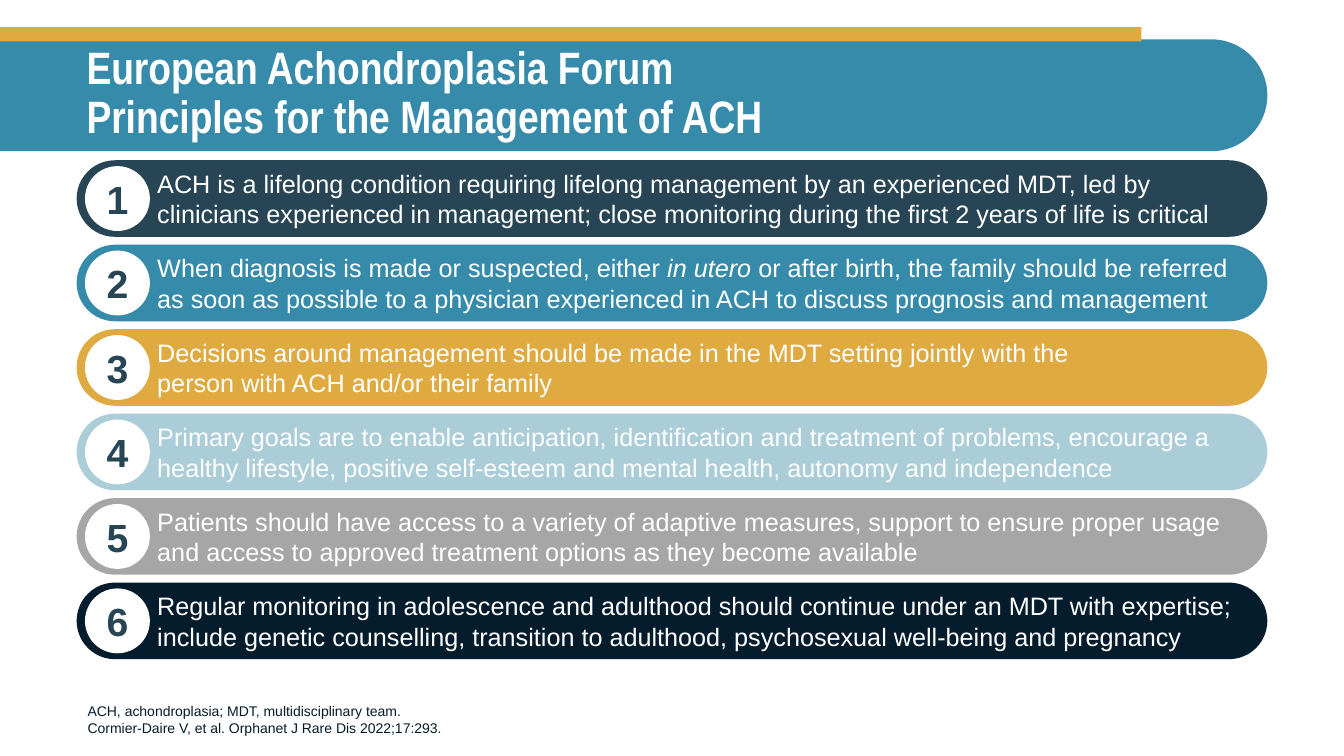
import pptx
import pptx.util
import pptx.dml.color
import pptx.enum.shapes
import pptx.enum.text

Inches = pptx.util.Inches
Kind = pptx.enum.shapes.MSO_SHAPE
Align = pptx.enum.text.PP_ALIGN
Anchor = pptx.enum.text.MSO_ANCHOR

theme = {
    "white": "FFFFFF", "ink": "051C2C", "slate": "274554", "teal": "368BAB",
    "gold": "DFAA40", "sky": "AACDD8", "gray": "A6A6A6",
    "head": 32.4, "digit": 28, "body": 18, "note": 10,
    "font": "Arial", "narrow": "Arial Narrow",
}


def color(name):
    return pptx.dml.color.RGBColor.from_string(theme[name])


def draw(shapes, kind, box, fill, line=None):
    """Add a flat preset shape; box is left, top, width, height in inches."""
    shape = shapes.add_shape(kind, *map(Inches, box))
    shape.shadow.inherit = False
    shape.fill.solid()
    shape.fill.fore_color.rgb = color(fill)
    if line:
        shape.line.color.rgb = color(line)
        shape.line.width = pptx.util.Pt(1)
    else:
        shape.line.fill.background()
    return shape


def write(shape, text, size="body", ink="white", font="font", bold=False,
          align=Align.LEFT, anchor=Anchor.MIDDLE, indent=0, space=None):
    """Fill a shape: newline parts paragraphs, | breaks a line, * toggles italic."""
    frame = shape.text_frame
    frame.word_wrap = True
    frame.vertical_anchor = anchor
    for i, part in enumerate(text.split("\n")):
        para = frame.add_paragraph() if i else frame.paragraphs[0]
        para.alignment = align
        para.line_spacing = space
        if indent:
            props = para._p.get_or_add_pPr()
            props.set("marL", str(Inches(indent)))
            props.set("indent", "0")
        for j, line in enumerate(part.split("|")):
            if j:
                para.add_line_break()
            for k, words in enumerate(line.split("*")):
                run = para.add_run()
                run.text = words
                run.font.name = theme[font]
                run.font.size = pptx.util.Pt(theme[size])
                run.font.color.rgb = color(ink)
                run.font.bold = bold
                run.font.italic = k % 2 == 1


deck = pptx.Presentation()
deck.slide_width, deck.slide_height = Inches(13.33), Inches(7.5)
slide = deck.slides.add_slide(deck.slide_layouts[6])
shapes = slide.shapes

left, width = 0.76, 11.81

# Header: a band with its round end turned to the right
band = draw(shapes, Kind.ROUND_2_SAME_RECTANGLE, (5.73, -5.34, 1.11, 12.57), "teal")
band.adjustments[0], band.adjustments[1] = 0, 0.5
band.rotation = 270
draw(shapes, Kind.RECTANGLE, (0, 0.27, 11.32, 0.14), "gold")
title = shapes.add_textbox(*map(Inches, (left, 0.39, width, 1.1)))
write(title, "European Achondroplasia Forum |Principles for the Management of ACH",
      size="head", font="narrow", bold=True, space=0.9)

notes = shapes.add_textbox(*map(Inches, (0.77, 6.71, 9.88, 0.64)))
write(notes, "ACH, achondroplasia; MDT, multidisciplinary team.\n"
      "Cormier‑Daire V, et al. Orphanet J Rare Dis 2022;17:293.",
      size="note", ink="ink", anchor=Anchor.BOTTOM)

# Numbered principles, evenly spaced
rules = [
    ("slate", "ACH is a lifelong condition requiring lifelong management by an "
     "experienced MDT, led by clinicians experienced in management; close "
     "monitoring during the first 2 years of life is critical"),
    ("teal", "When diagnosis is made or suspected, either *in utero *or after birth, "
     "the family should be referred as soon as possible to a physician "
     "experienced in ACH to discuss prognosis and management"),
    ("gold", "Decisions around management should be made in the MDT setting jointly "
     "with the |person with ACH and/or their family"),
    ("sky", "Primary goals are to enable anticipation, identification and treatment "
     "of problems, encourage a healthy lifestyle, positive self-esteem and "
     "mental health, autonomy and independence"),
    ("gray", "Patients should have access to a variety of adaptive measures, support "
     "to ensure proper usage and access to approved treatment options as they "
     "become available"),
    ("ink", "Regular monitoring in adolescence and adulthood should continue under an "
     "MDT with expertise; include genetic counselling, transition to adulthood, "
     "psychosexual well-being and pregnancy"),
]
first, last, tall, disc = 1.59, 5.78, 0.76, 0.63
step = (last - first) / (len(rules) - 1)

for i, (fill, text) in enumerate(rules):
    top = first + i * step
    group = shapes.add_group_shape().shapes
    bar = draw(group, Kind.ROUNDED_RECTANGLE, (left, top, width, tall), fill)
    bar.adjustments[0] = 0.5
    write(bar, text, indent=0.59)
    dot = draw(group, Kind.OVAL, (0.85, top + (tall - disc) / 2, disc, disc),
               "white", line="white")
    dot.text_frame.margin_left = dot.text_frame.margin_right = 0
    write(dot, str(i + 1), size="digit", ink="slate", bold=True, align=Align.CENTER)

deck.save("out.pptx")
